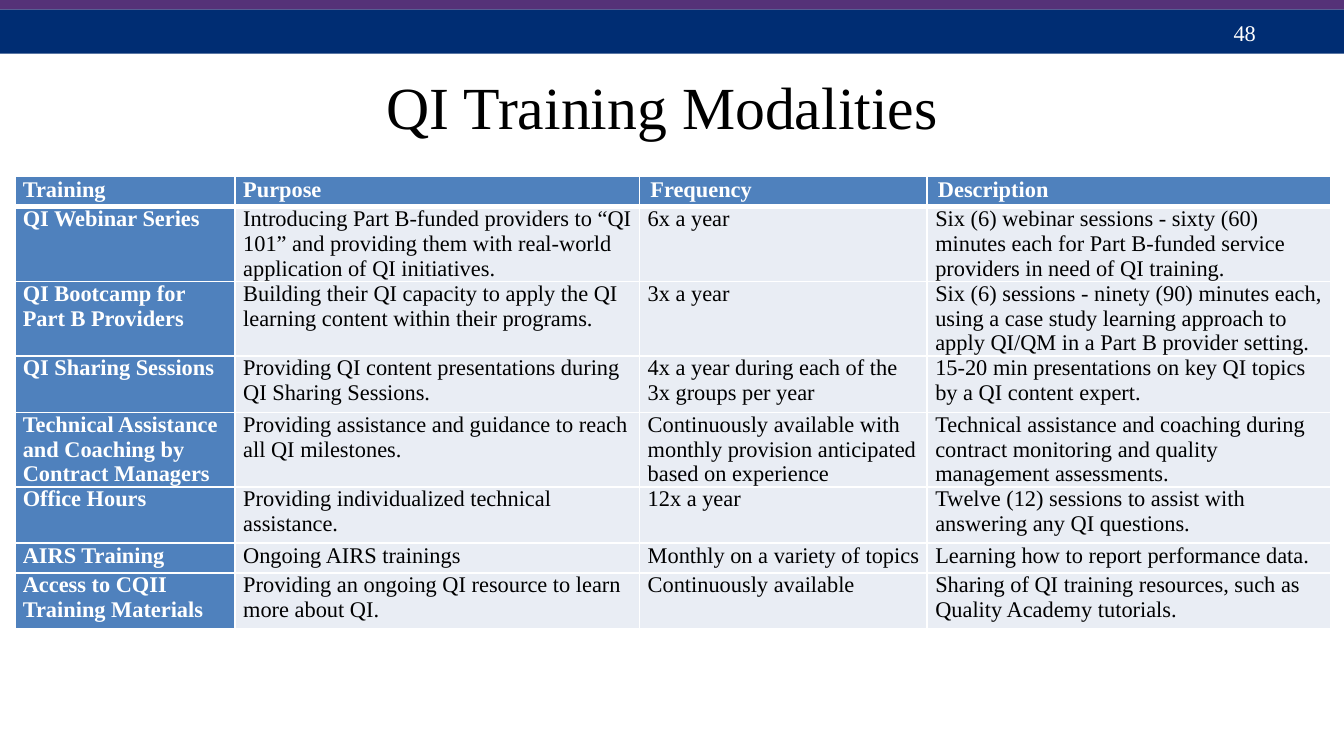
from lxml import etree
from pptx import Presentation
from pptx.dml.color import RGBColor
from pptx.enum import shapes, text
from pptx.oxml import ns
from pptx.util import Inches, Pt

NAVY = RGBColor(0x00, 0x2D, 0x73)
PURPLE = RGBColor(0x55, 0x32, 0x78)
BLUE = RGBColor(0x4F, 0x81, 0xBD)
PALE = RGBColor(0xE9, 0xED, 0xF4)
WHITE = RGBColor(0xFF, 0xFF, 0xFF)
BLACK = RGBColor(0x00, 0x00, 0x00)
FONT = "Times New Roman"

COLUMN_WIDTHS = [1.64, 3.01, 2.14, 3]
ROW_HEIGHTS = [0.23] + [0.42] * 5 + [0.22, 0.42]
TRAININGS = [
    ["Training", "Purpose", "Frequency", "Description"],
    ["QI Webinar Series",
     "Introducing Part B-funded providers to “QI 101” and providing them with real-world application of QI initiatives.",
     "6x a year",
     "Six (6) webinar sessions - sixty (60) minutes each for Part B-funded service providers in need of QI training."],
    ["QI Bootcamp for Part B Providers",
     "Building their QI capacity to apply the QI learning content within their programs.",
     "3x a year",
     "Six (6) sessions - ninety (90) minutes each, using a case study learning approach to apply QI/QM in a Part B provider setting."],
    ["QI Sharing Sessions",
     "Providing QI content presentations during QI Sharing Sessions.",
     "4x a year during each of the 3x groups per year",
     "15-20 min presentations on key QI topics by a QI content expert."],
    ["Technical Assistance and Coaching by Contract Managers",
     "Providing assistance and guidance to reach all QI milestones.",
     "Continuously available with monthly provision anticipated based on experience",
     "Technical assistance and coaching during contract monitoring and quality management assessments."],
    ["Office Hours",
     "Providing individualized technical assistance.",
     "12x a year",
     "Twelve (12) sessions to assist with answering any QI questions."],
    ["AIRS Training",
     "Ongoing AIRS trainings",
     "Monthly on a variety of topics",
     "Learning how to report performance data."],
    ["Access to CQII Training Materials",
     "Providing an ongoing QI resource to learn more about QI.",
     "Continuously available",
     "Sharing of QI training resources, such as Quality Academy tutorials."],
]


def write_text(frame, words, size=12, color=BLACK, bold=False, align=None,
               indent=0, right_indent=0, line_spacing=None):
    para = frame.paragraphs[0]
    para.alignment = align
    if line_spacing:
        para.line_spacing = line_spacing
    if indent:
        properties = para._p.get_or_add_pPr()
        properties.set("marL", str(Inches(indent)))
        properties.set("marR", str(Inches(right_indent)))
        properties.set("indent", "0")
    span = para.add_run()
    span.text = words
    span.font.name = FONT
    span.font.size = Pt(size)
    span.font.bold = bold
    span.font.color.rgb = color


def add_band(page, left, top, width, height, color):
    band = page.shapes.add_shape(shapes.MSO_SHAPE.RECTANGLE, Inches(left),
                                 Inches(top), Inches(width), Inches(height))
    band.shadow.inherit = False
    band.fill.solid()
    band.fill.fore_color.rgb = color
    band.line.fill.background()


def add_label(page, left, top, width, height, words, anchor, margin_top=0.05, **style):
    box = page.shapes.add_textbox(Inches(left), Inches(top), Inches(width), Inches(height))
    frame = box.text_frame
    frame.word_wrap = True
    frame.vertical_anchor = anchor
    frame.margin_top = Inches(margin_top)
    write_text(frame, words, **style)


def add_banner(page, left, top, width):
    add_band(page, left, top + 0.09, width, 0.33, NAVY)
    add_label(page, left + 9.08, top + 0.12, 0.75, 0.3, "48",
              text.MSO_ANCHOR.MIDDLE, margin_top=0.04, color=WHITE)
    add_band(page, left, top, width, 0.09, PURPLE)


def set_borders(cell, **widths):
    properties = cell._tc.get_or_add_tcPr()
    for side in "LRTB":
        line = etree.SubElement(properties, ns.qn("a:ln" + side),
                                w=str(Pt(widths.get(side, 1))))
        fill = etree.SubElement(line, ns.qn("a:solidFill"))
        etree.SubElement(fill, ns.qn("a:srgbClr"), val=str(WHITE))


def fill_cell(cell, words, row, column):
    is_header = row == 0
    is_heading = is_header or column == 0
    cell.margin_left = cell.margin_right = cell.margin_top = cell.margin_bottom = 0
    if is_header:
        cell.vertical_anchor = text.MSO_ANCHOR.MIDDLE
    set_borders(cell, T=3 if row == 1 else 1, B=3 if is_header else 1)
    cell.fill.solid()
    cell.fill.fore_color.rgb = BLUE if is_heading else PALE
    write_text(cell.text_frame, words, bold=is_heading,
               color=WHITE if is_heading else BLACK,
               indent=0.08 if is_header and column > 1 else 0.06,
               right_indent=0.04,
               line_spacing=Pt(11.2) if is_header else Pt(13.3))


def add_training_table(page, left, top):
    frame = page.shapes.add_table(
        len(ROW_HEIGHTS), len(COLUMN_WIDTHS), Inches(left), Inches(top),
        Inches(sum(COLUMN_WIDTHS)), Inches(3.5))
    table = frame.table
    for column, width in zip(table.columns, COLUMN_WIDTHS):
        column.width = Inches(width)
    for row, height in zip(table.rows, ROW_HEIGHTS):
        row.height = Inches(height)
    frame.height = Inches(3.5)
    for row, entries in enumerate(TRAININGS):
        for column, words in enumerate(entries):
            fill_cell(table.cell(row, column), words, row, column)


def main():
    deck = Presentation()
    deck.slide_width = Inches(10)
    deck.slide_height = Inches(10 * 9 / 16)
    page = deck.slides.add_slide(deck.slide_layouts[6])
    add_banner(page, 0, -0.02, 10)
    add_training_table(page, 0.11, 1.31)
    add_label(page, 0.11, 0.48, 9.64, 0.44, "QI Training Modalities",
              text.MSO_ANCHOR.TOP, margin_top=0.04, size=32,
              align=text.PP_ALIGN.CENTER)
    deck.save("out.pptx")


if __name__ == "__main__":
    main()
